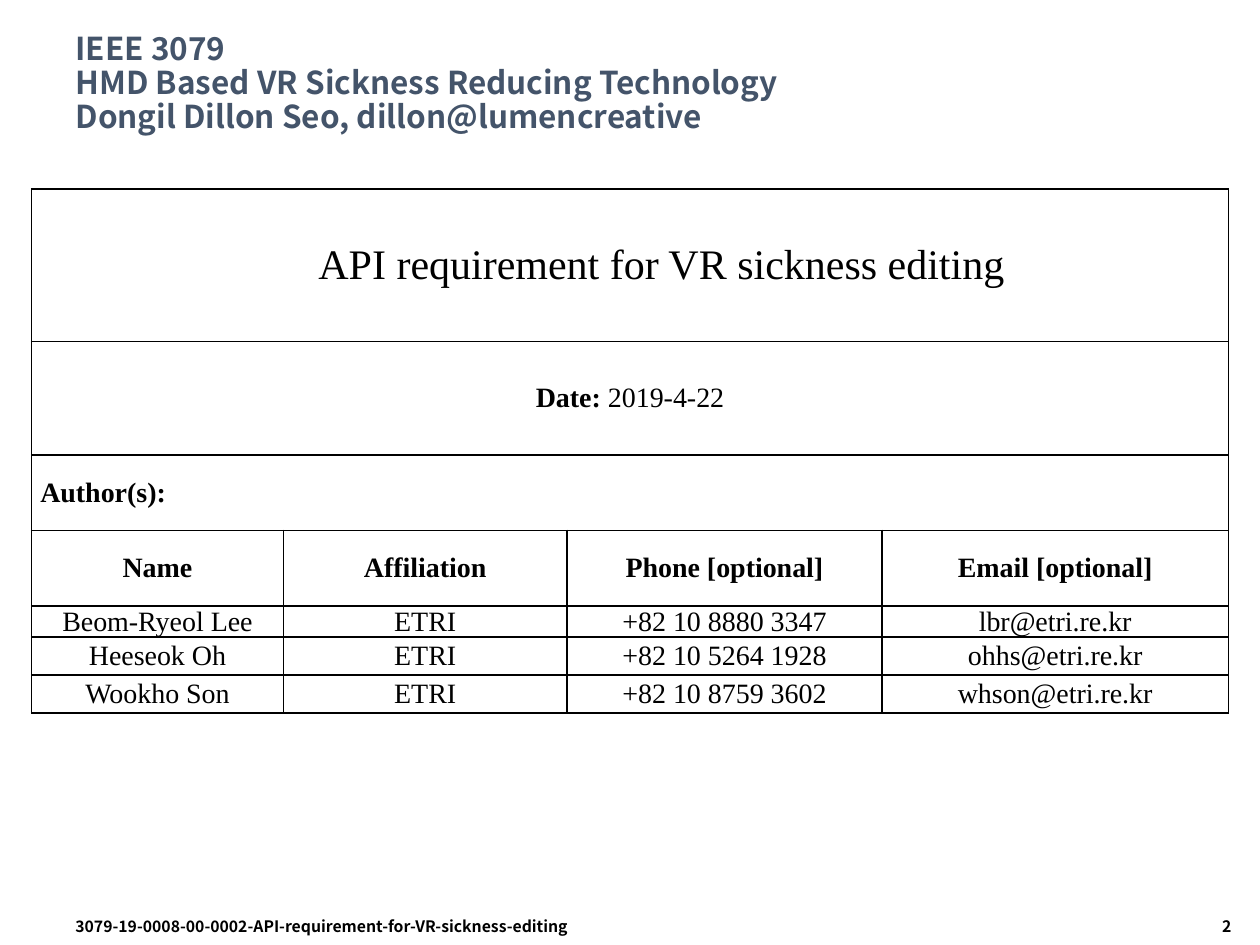
from lxml import etree
from pptx import Presentation
from pptx.dml.color import RGBColor
from pptx.enum.text import MSO_ANCHOR, PP_ALIGN
from pptx.oxml.ns import qn
from pptx.util import Inches, Pt

LEFT, CENTER, RIGHT = PP_ALIGN.LEFT, PP_ALIGN.CENTER, PP_ALIGN.RIGHT
MIDDLE, TOP = MSO_ANCHOR.MIDDLE, MSO_ANCHOR.TOP
COLORS = {"title": "44546A", "text": "000000", "border": "000000", "cell": "FFFFFF"}
SANS, SERIF = "Noto Sans CJK KR", "Times New Roman"

TITLE_LINES = [
    "IEEE 3079",
    "HMD Based VR Sickness Reducing Technology",
    "Dongil Dillon Seo, dillon@lumencreative",
]
COLUMN_WIDTHS = [2, 2.25, 2.5, 2.75]
ROW_HEIGHTS = [1.21, 0.9, 0.6, 0.6, 0.15, 0.3, 0.3]
HEADINGS = ["Name", "Affiliation", "Phone [optional]", "Email [optional]"]
AUTHORS = [
    ["Beom-Ryeol Lee", "ETRI", "+82 10 8880 3347", "lbr@etri.re.kr"],
    ["Heeseok Oh", "ETRI", "+82 10 5264 1928", "ohhs@etri.re.kr"],
    ["Wookho Son", "ETRI", "+82 10 8759 3602", "whson@etri.re.kr"],
]


def add_run(paragraph, text, size, font_name, bold=False, color="text"):
    """Append one formatted run to a paragraph."""
    run = paragraph.add_run()
    run.text = text
    run.font.size = Pt(size)
    run.font.name = font_name
    run.font.bold = bold
    run.font.color.rgb = RGBColor.from_string(COLORS[color])


def place(shape, box):
    """Move a shape to a left, top, width, height box in inches."""
    shape.left, shape.top, shape.width, shape.height = map(Inches, box)


def add_title(slide, box):
    """Fill the title placeholder with the project heading."""
    title = slide.shapes.title
    place(title, box)
    title.text_frame.word_wrap = True
    title.text_frame.vertical_anchor = MIDDLE
    paragraph = title.text_frame.paragraphs[0]
    paragraph.alignment = LEFT
    paragraph.line_spacing = 0.9
    for index, line in enumerate(TITLE_LINES):
        if index:
            paragraph.add_line_break()
        add_run(paragraph, line, 18, SANS, True, "title")


def style_cell(cell):
    """Give a cell its borders, fill, margins and anchor."""
    cell.margin_left = cell.margin_right = Inches(0.07)
    cell.margin_top = cell.margin_bottom = 0
    cell.vertical_anchor = MIDDLE
    properties = cell._tc.get_or_add_tcPr()
    for side in ("a:lnL", "a:lnR", "a:lnT", "a:lnB"):
        line = etree.SubElement(properties, qn(side), w=str(Pt(1)))
        fill = etree.SubElement(line, qn("a:solidFill"))
        etree.SubElement(fill, qn("a:srgbClr"), val=COLORS["border"])
    cell.fill.solid()
    cell.fill.fore_color.rgb = RGBColor.from_string(COLORS["cell"])


def write_cell(cell, runs, size=16, alignment=CENTER):
    """Write (text, bold) runs into a cell and return the paragraph."""
    paragraph = cell.text_frame.paragraphs[0]
    paragraph.alignment = alignment
    for text, bold in runs:
        add_run(paragraph, text, size, SERIF, bold)
    return paragraph


def add_document_table(slide, box):
    """Add the table with the document title, date and authors."""
    frame = slide.shapes.add_table(len(ROW_HEIGHTS), len(COLUMN_WIDTHS), *map(Inches, box))
    table = frame.table
    table.first_row = table.horz_banding = False
    for column, width in zip(table.columns, COLUMN_WIDTHS):
        column.width = Inches(width)
    for row, height in zip(table.rows, ROW_HEIGHTS):
        row.height = Inches(height)
        for cell in row.cells:
            style_cell(cell)
    for row_index in range(3):
        table.cell(row_index, 0).merge(table.cell(row_index, len(COLUMN_WIDTHS) - 1))

    subject = write_cell(table.cell(0, 0), [("API requirement for VR sickness editing", False)], 24)
    subject._p.get_or_add_pPr().set("marL", str(Inches(0.5)))
    date = write_cell(table.cell(1, 0), [("Date:", True), (" 2019-4-22", False)])
    subject.space_after = date.space_after = Pt(12)
    write_cell(table.cell(2, 0), [("Author(s):", True)], alignment=LEFT)
    for row_index, values in enumerate([HEADINGS] + AUTHORS, start=3):
        for column_index, value in enumerate(values):
            write_cell(table.cell(row_index, column_index), [(value, values is HEADINGS)])


def add_footer_text(slide, box, text, alignment):
    """Add one bold footer text box."""
    footer = slide.shapes.add_textbox(*map(Inches, box))
    footer.text_frame.word_wrap = True
    footer.text_frame.vertical_anchor = TOP
    paragraph = footer.text_frame.paragraphs[0]
    paragraph.alignment = alignment
    add_run(paragraph, text, 9, SANS, True)


def main():
    """Build and save the slide."""
    presentation = Presentation()
    presentation.slide_width, presentation.slide_height = Inches(10), Inches(7.5)
    slide = presentation.slides.add_slide(presentation.slide_layouts[5])
    add_title(slide, (0.5, 0.17, 9, 1))
    add_document_table(slide, (0.25, 1.5, sum(COLUMN_WIDTHS), sum(ROW_HEIGHTS)))
    add_footer_text(slide, (8.25, 7.23, 1.62, 0.27), "2", RIGHT)
    add_footer_text(
        slide, (0.5, 7.23, 7.75, 0.27),
        "3079-19-0008-00-0002-API-requirement-for-VR-sickness-editing", LEFT,
    )
    presentation.save("out.pptx")


if __name__ == "__main__":
    main()
